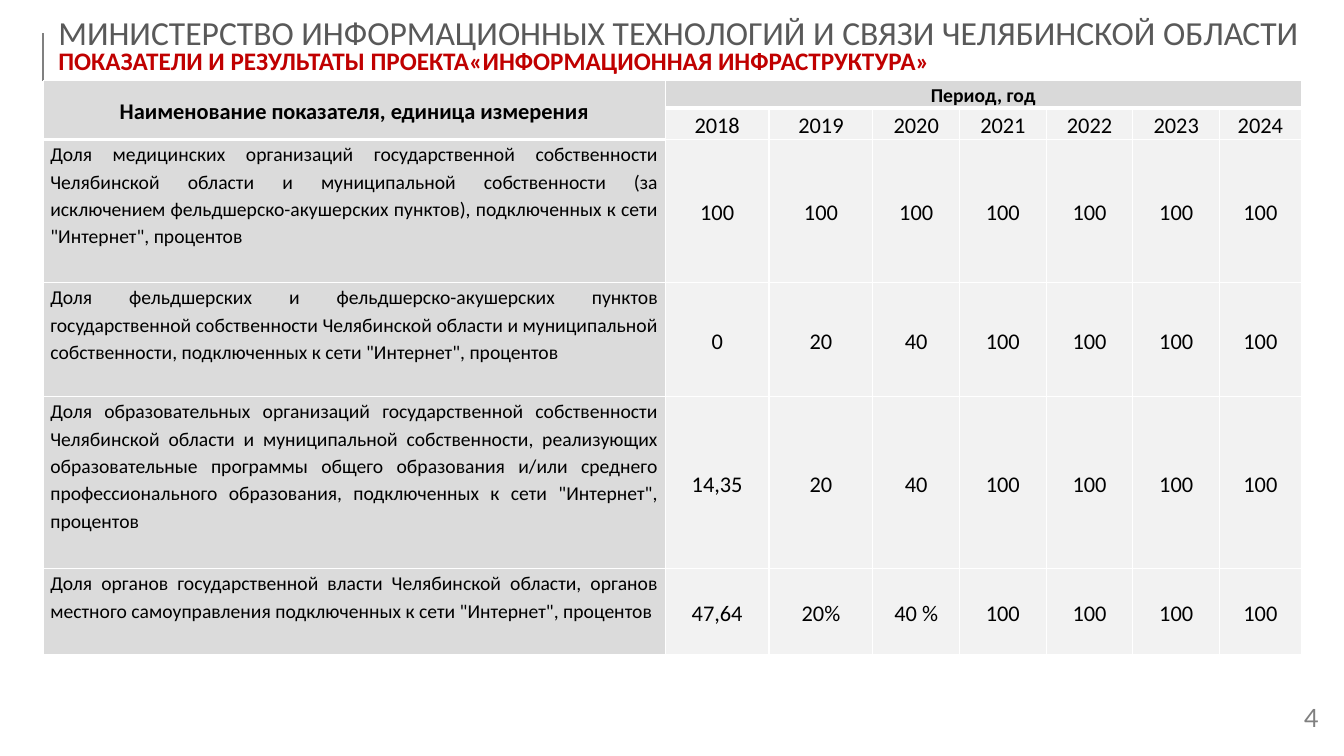
import dataclasses

import pptx
import pptx.dml.color
import pptx.enum.shapes
import pptx.enum.text
import pptx.oxml
import pptx.oxml.ns
import pptx.util

Pt = pptx.util.Pt
ALIGN = pptx.enum.text.PP_ALIGN
ANCHOR = pptx.enum.text.MSO_ANCHOR


@dataclasses.dataclass(frozen=True)
class Theme:
    font: str = "Calibri"
    number_font: str = "Lato"
    black: str = "000000"
    white: str = "FFFFFF"
    grey: str = "808080"
    ministry: str = "595959"
    accent: str = "C00000"
    name_fill: str = "DBDBDB"
    period_fill: str = "D9D9D9"
    value_fill: str = "F2F2F2"
    title_size: int = 24
    subtitle_size: int = 18
    value_size: int = 16
    name_size: int = 14
    heading_spacing: float = 0.8
    table_spacing: float = 1.15


THEME = Theme()

YEARS = range(2018, 2025)
COLUMN_WIDTHS = [444.24, 74.16, 74.16, 61.92, 61.92, 61.92, 61.92, 58.32]
ROW_HEIGHTS = [19.6, 22.4, 102.24, 81.36, 123.12, 61.2]
INDICATORS = [
    ('Доля медицинских организаций государственной собственности Челябинской области '
     'и муниципальной собственности (за исключением фельдшерско-акушерских пунктов), '
     'подключенных к сети "Интернет", процентов',
     ["100", "100", "100"]),
    ('Доля фельдшерских и фельдшерско-акушерских пунктов государственной собственности '
     'Челябинской области и муниципальной собственности, подключенных к сети "Интернет", '
     'процентов',
     ["0", "20", "40"]),
    ('Доля образовательных организаций государственной собственности Челябинской области '
     'и муниципальной собственности, реализующих образовательные программы общего '
     'образования и/или среднего профессионального образования, подключенных к сети '
     '"Интернет", процентов',
     ["14,35", "20", "40"]),
    ('Доля органов государственной власти Челябинской области, органов местного '
     'самоуправления подключенных к сети "Интернет", процентов',
     ["47,64", "20%", "40 %"]),
]
LATER_VALUES = ["100"] * 4  # 2021-2024, the same for every indicator


def rgb(color):
    return pptx.dml.color.RGBColor.from_string(color)


def write(para, text, size, color, align, spacing, bold=False, font=THEME.font):
    para.text = text
    para.alignment = align
    para.line_spacing = spacing
    para.font.name = font
    para.font.size = Pt(size)
    para.font.bold = bold
    para.font.color.rgb = rgb(color)


def add_box(page, left, top, width, height):
    frame = page.shapes.add_textbox(Pt(left), Pt(top), Pt(width), Pt(height)).text_frame
    frame.word_wrap = True
    frame.vertical_anchor = ANCHOR.MIDDLE
    return frame


def add_rule(page, left, top, bottom):
    rule = page.shapes.add_connector(
        pptx.enum.shapes.MSO_CONNECTOR.STRAIGHT, Pt(left), Pt(top), Pt(left), Pt(bottom))
    rule.line.color.rgb = rgb(THEME.grey)
    rule.line.width = Pt(1.5)
    rule._element.spPr.append(pptx.oxml.parse_xml(
        f'<a:effectLst {pptx.oxml.ns.nsdecls("a")}/>'))


def set_borders(cell, bottom):
    properties = cell._tc.get_or_add_tcPr()
    for side, width in (("L", 1), ("R", 1), ("T", 1), ("B", bottom)):
        properties.append(pptx.oxml.parse_xml(
            f'<a:ln{side} {pptx.oxml.ns.nsdecls("a")} w="{Pt(width)}"><a:solidFill>'
            f'<a:srgbClr val="{THEME.white}"/></a:solidFill></a:ln{side}>'))


def style_cell(cell, fill, bottom=1):
    set_borders(cell, bottom)
    cell.fill.solid()
    cell.fill.fore_color.rgb = rgb(fill)
    cell.margin_left = cell.margin_right = Pt(5)
    cell.margin_top = cell.margin_bottom = 0


def fill_cell(cell, text, size, align=ALIGN.CENTER, anchor=ANCHOR.MIDDLE, bold=False):
    cell.vertical_anchor = anchor
    write(cell.text_frame.paragraphs[0], text, size, THEME.black, align,
          THEME.table_spacing, bold)


def add_heading(page):
    frame = add_box(page, 34.56, 18.72, 971.28, 48.24)
    frame.margin_bottom = Pt(21.2)
    write(frame.paragraphs[0],
          "МИНИСТЕРСТВО ИНФОРМАЦИОННЫХ ТЕХНОЛОГИЙ И СВЯЗИ ЧЕЛЯБИНСКОЙ ОБЛАСТИ",
          THEME.title_size, THEME.ministry, ALIGN.LEFT, THEME.heading_spacing)
    write(frame.add_paragraph(),
          "ПОКАЗАТЕЛИ И РЕЗУЛЬТАТЫ ПРОЕКТА«ИНФОРМАЦИОННАЯ ИНФРАСТРУКТУРА»",
          THEME.subtitle_size, THEME.accent, ALIGN.JUSTIFY, THEME.heading_spacing, bold=True)


def add_page_number(page):
    frame = add_box(page, 894.96, 496.8, 83.52, 36)
    write(frame.paragraphs[0], "4", THEME.subtitle_size, THEME.grey, ALIGN.CENTER,
          THEME.heading_spacing, font=THEME.number_font)


def add_indicator_table(page):
    table = page.shapes.add_table(
        len(ROW_HEIGHTS), len(COLUMN_WIDTHS), Pt(30.96), Pt(57.6),
        Pt(sum(COLUMN_WIDTHS)), Pt(sum(ROW_HEIGHTS))).table
    table.first_row = table.horz_banding = False
    for column, width in zip(table.columns, COLUMN_WIDTHS):
        column.width = Pt(width)
    for row, height in zip(table.rows, ROW_HEIGHTS):
        row.height = Pt(height)

    # Fills and borders
    for row_index, row in enumerate(table.rows):
        for column_index, cell in enumerate(row.cells):
            if column_index == 0:
                style_cell(cell, THEME.name_fill, bottom=3 if row_index < 2 else 1)
            elif row_index == 0:
                style_cell(cell, THEME.period_fill, bottom=3)
            else:
                style_cell(cell, THEME.value_fill)

    # Header
    table.cell(0, 0).merge(table.cell(1, 0))
    table.cell(0, 1).merge(table.cell(0, len(YEARS)))
    fill_cell(table.cell(0, 0), "Наименование показателя, единица измерения",
              THEME.value_size, bold=True)
    fill_cell(table.cell(0, 1), "Период, год", THEME.name_size,
              anchor=ANCHOR.TOP, bold=True)
    for column_index, year in enumerate(YEARS, 1):
        fill_cell(table.cell(1, column_index), str(year), THEME.value_size,
                  anchor=ANCHOR.TOP)

    # Indicators
    for row_index, (name, early_values) in enumerate(INDICATORS, 2):
        fill_cell(table.cell(row_index, 0), name, THEME.name_size,
                  ALIGN.JUSTIFY, ANCHOR.TOP)
        for column_index, value in enumerate(early_values + LATER_VALUES, 1):
            fill_cell(table.cell(row_index, column_index), value, THEME.value_size)


def main():
    deck = pptx.Presentation()
    deck.slide_width, deck.slide_height = Pt(960), Pt(540)
    page = deck.slides.add_slide(deck.slide_layouts[6])
    add_rule(page, 30.96, 23.76, 57.6)
    add_page_number(page)
    add_heading(page)
    add_indicator_table(page)
    deck.save("out.pptx")


if __name__ == "__main__":
    main()
